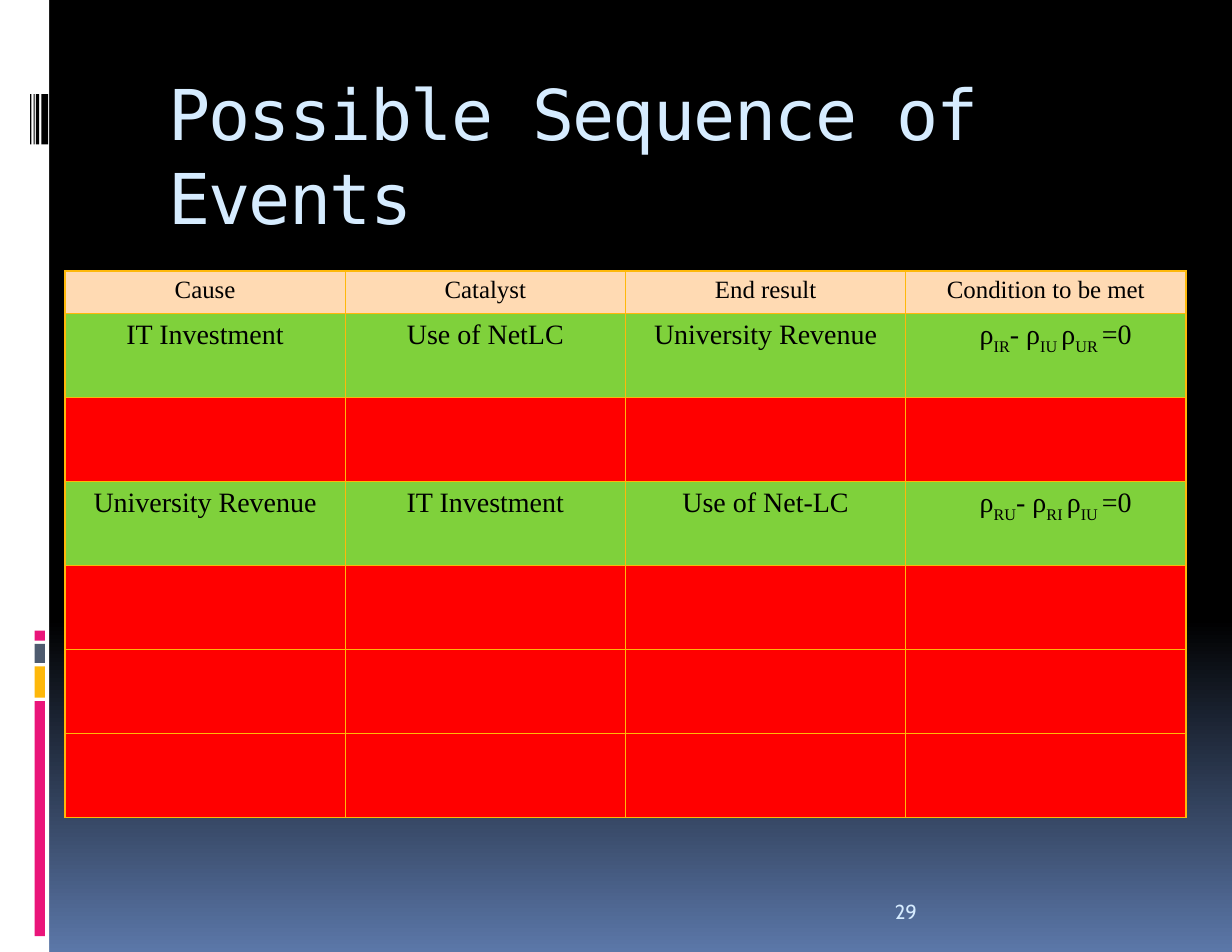
from copy import deepcopy

from lxml.etree import SubElement
from pptx import Presentation
from pptx.dml.color import RGBColor
from pptx.enum.shapes import MSO_SHAPE
from pptx.enum.text import MSO_ANCHOR as ANCHOR, PP_ALIGN as ALIGN
from pptx.oxml.ns import qn
from pptx.util import Inches, Pt


def rgb(value):
    return RGBColor.from_string(value)


def add_run(p, text, font, size, color, baseline=0):
    r = p.add_run()
    r.text = text
    for name, value in {"name": font, "size": Pt(size)}.items():
        setattr(r.font, name, value)
    r.font.color.rgb = rgb(color)
    if baseline:
        r.font._element.set("baseline", str(baseline * 1000))
    return r


BLACK, GOLD, PINK, PALE = "000000", "FEB80A", "EA157A", "D6ECFF"
PEACH, GREEN, RED = "FFDAB3", "7FD13B", "FF0000"
SERIF = "Times New Roman"

prs = Presentation()
prs.slide_width, prs.slide_height = Inches(11), Inches(8.5)
s = prs.slides.add_slide(prs.slide_layouts[5])

# Background: black down to 65 %, then fading to blue
fill = s.background.fill
fill.gradient()
fill.gradient_angle = 270
for stop, position, color in zip(fill.gradient_stops, (0, 1), (BLACK, "5B77A8")):
    stop.position = position
    stop.color.rgb = rgb(color)
stops = s.element.find(".//" + qn("a:gsLst"))
middle = deepcopy(stops[0])
middle.set("pos", "65000")
stops.insert(1, middle)

# Side strip with coloured blocks and bars
strip = [
    (0, 0, 0.44, 8.5, "FFFFFF"),
    (0.31, 6.26, 0.09, 2.1, PINK),
    (0.31, 5.95, 0.09, 0.28, GOLD),
    (0.31, 5.75, 0.09, 0.17, "4E5B6F"),
    (0.31, 5.63, 0.09, 0.09, PINK),
]
bars = [(0.37, 0.06), (0.32, 0.03), (0.3, 0.01), (0.27, 0.01)]
strip += [(x, 0.84, w, 0.45, BLACK) for x, w in bars]
for *box, color in strip:
    sp = s.shapes.add_shape(MSO_SHAPE.RECTANGLE, *map(Inches, box))
    sp.shadow.inherit = False
    sp.fill.solid()
    sp.fill.fore_color.rgb = rgb(color)
    sp.line.fill.background()

# Title and slide number
title = s.shapes.title
title.left, title.top = Inches(1.39), Inches(0.57)
title.width, title.height = Inches(9.35), Inches(1.42)
number = s.shapes.add_textbox(*map(Inches, (7.88, 7.74, 2.29, 0.57)))
texts = [
    (title, "Possible Sequence of Events", "DejaVu Sans Mono", 45, ANCHOR.TOP),
    (number, "29", "Cabin", 13, ANCHOR.BOTTOM),
]
for sp, text, font, size, anchor in texts:
    tf = sp.text_frame
    frame = {
        "word_wrap": True,
        "vertical_anchor": anchor,
        "margin_left": Inches(0.11),
        "margin_right": Inches(0.11),
        "margin_top": Inches(0.06),
        "margin_bottom": Inches(0.06),
    }
    for name, value in frame.items():
        setattr(tf, name, value)
    p = tf.paragraphs[0]
    p.alignment = ALIGN.LEFT
    r = add_run(p, text, font, size, PALE)
    if sp is title:
        r.font._element.set("spc", "-110")

# Table: a list in the last column holds a formula, odd parts are subscripts
rows = [
    (PEACH, ["Cause", "Catalyst", "End result", "Condition to be met"]),
    (GREEN, ["IT Investment", "Use of NetLC", "University Revenue",
             ["ρ", "IR", "- ρ", "IU ", "ρ", "UR ", "=0"]]),
    (RED, [""] * 4),
    (GREEN, ["University Revenue", "IT Investment", "Use of Net-LC",
             ["ρ", "RU", "- ρ", "RI ", "ρ", "IU ", "=0"]]),
] + [(RED, [""] * 4)] * 3
table = s.shapes.add_table(
    len(rows), 4, Inches(0.58), Inches(2.42), Inches(10.01), Inches(4.88)
).table
for i, (color, values) in enumerate(rows):
    table.rows[i].height = Inches(0.75 if i else 0.38)
    for j, value in enumerate(values):
        cell = table.cell(i, j)
        tcPr = cell._tc.get_or_add_tcPr()
        for side in ("a:lnL", "a:lnR", "a:lnT", "a:lnB"):
            ln = SubElement(tcPr, qn(side), w=str(Pt(0.94)))
            SubElement(SubElement(ln, qn("a:solidFill")), qn("a:srgbClr"), val=GOLD)
        cell.fill.solid()
        cell.fill.fore_color.rgb = rgb(color)
        p = cell.text_frame.paragraphs[0]
        if isinstance(value, list):
            p._p.get_or_add_pPr().set("marL", str(Inches(0.56)))
            for k, part in enumerate(value):
                add_run(p, part, SERIF, 18, BLACK, -30 if k % 2 else 0)
        elif value:
            p.alignment = ALIGN.CENTER
            add_run(p, value, SERIF, 18 if i else 16, BLACK)

prs.save("out.pptx")
